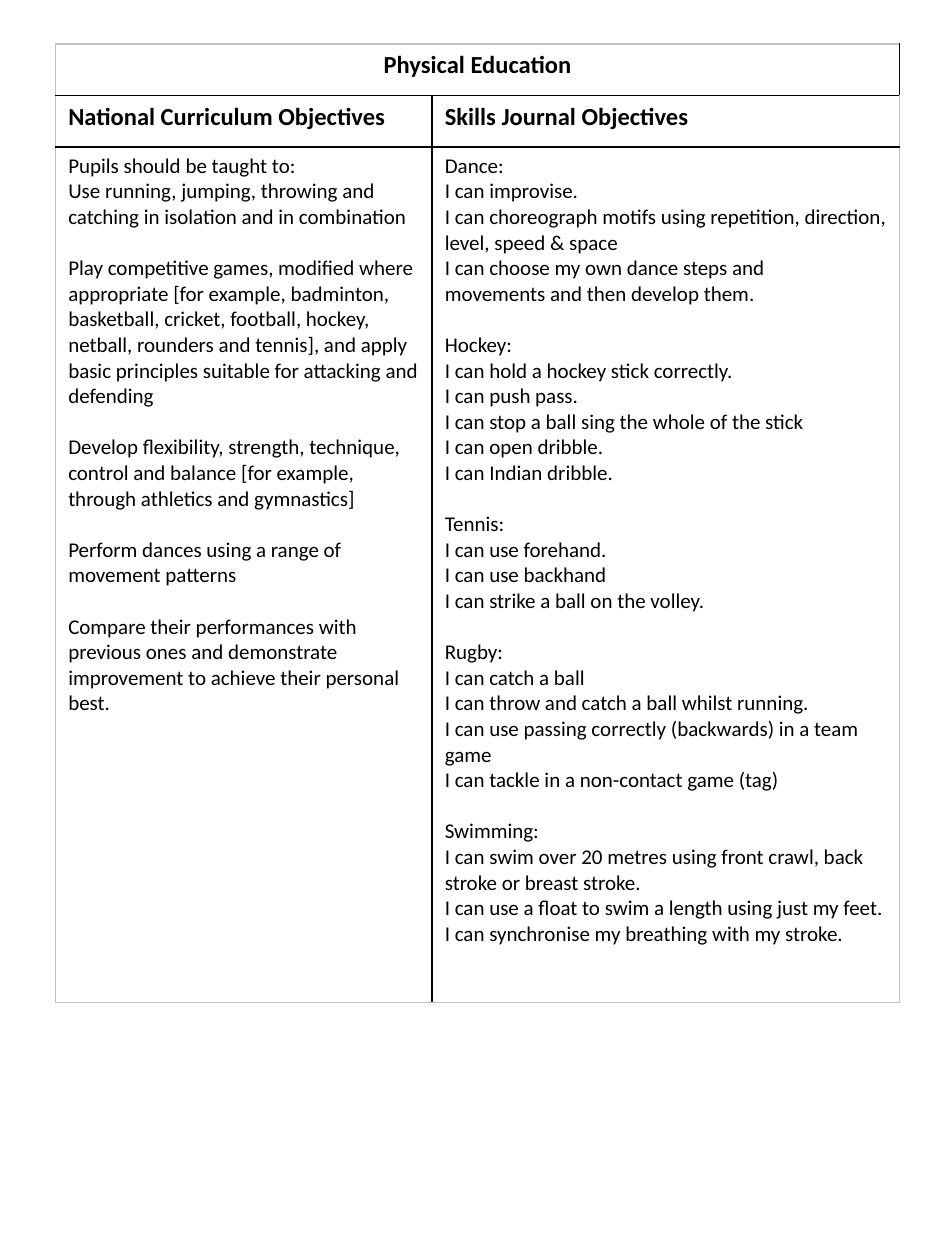
from lxml.etree import SubElement
from pptx import Presentation
from pptx.dml.color import RGBColor
from pptx.enum.text import PP_ALIGN as Align
from pptx.oxml.ns import qn
from pptx.util import Pt

FONT, BLACK, GREY = "Calibri", "000000", "BFBFBF"
HEADING = {"size": Pt(14), "bold": True, "name": FONT}
BODY = {"size": Pt(12), "bold": False, "name": FONT}
GROUP_GAP = 14.65
COL_WIDTHS = [215.2, 267]
ROW_HEIGHTS = [29.4, 29.4, 489]

TITLE = "Physical Education"
HEADERS = ["National Curriculum Objectives", "Skills Journal Objectives"]
CURRICULUM = [
    ["Pupils should be taught to:",
     "Use running, jumping, throwing and catching in isolation and in combination"],
    ["Play competitive games, modified where appropriate [for example, badminton, "
     "basketball, cricket, football, hockey, netball, rounders and tennis], and apply "
     "basic principles suitable for attacking and defending"],
    ["Develop flexibility, strength, technique, control and balance [for example, "
     "through athletics and gymnastics]"],
    ["Perform dances using a range of movement patterns"],
    ["Compare their performances with previous ones and demonstrate improvement to "
     "achieve their personal best."],
]
SKILLS = [
    ["Dance:", "I can improvise.",
     "I can choreograph motifs using repetition, direction, level, speed & space",
     "I can choose my own dance steps and", "movements and then develop them."],
    ["Hockey:", "I can hold a hockey stick correctly.", "I can push pass.",
     "I can stop a ball sing the whole of the stick", "I can open dribble.",
     "I can Indian dribble."],
    ["Tennis:", "I can use forehand.", "I can use backhand",
     "I can strike a ball on the volley."],
    ["Rugby:", "I can catch a ball", "I can throw and catch a ball whilst running.",
     "I can use passing correctly (backwards) in a team game",
     "I can tackle in a non-contact game (tag)"],
    ["Swimming:", "I can swim over 20 metres using front crawl, back",
     "stroke or breast stroke.",
     "I can use a float to swim a length using just my feet.",
     "I can synchronise my breathing with my stroke."],
]


def rgb(value):
    """Turn a hex string into a colour."""
    return RGBColor.from_string(value)


def set_borders(cell, colours):
    """Draw the left, right, top and bottom borders of a cell."""
    tc_pr = cell._tc.get_or_add_tcPr()
    for i, (side, colour) in enumerate(zip("LRTB", colours)):
        ln = SubElement(tc_pr, qn(f"a:ln{side}"), w=str(Pt(1)))
        fill = SubElement(ln, qn("a:solidFill"))
        SubElement(fill, qn("a:srgbClr"), val=colour)
        tc_pr.insert(i, ln)


def fill_cell(cell, groups, font, align=Align.LEFT):
    """Write groups of paragraphs with a gap before each later group."""
    tf = cell.text_frame
    lines = [(g and not i, text) for g, group in enumerate(groups)
             for i, text in enumerate(group)]
    for n, (gap, text) in enumerate(lines):
        p = tf.add_paragraph() if n else tf.paragraphs[0]
        p.alignment = align
        if gap:
            p.space_before = Pt(GROUP_GAP)
        r = p.add_run()
        r.text = text
        r.font.color.rgb = rgb(BLACK)
        for key, value in font.items():
            setattr(r.font, key, value)


def add_objectives_table(slide, left, top, width, height):
    """Place the table of objectives in the given box."""
    rows, cols = len(ROW_HEIGHTS), len(COL_WIDTHS)
    table = slide.shapes.add_table(rows, cols, Pt(left), Pt(top), Pt(width), Pt(height)).table
    table.first_row = table.horz_banding = False
    for col, w in zip(table.columns, COL_WIDTHS):
        col.width = Pt(w)
    for row, h in zip(table.rows, ROW_HEIGHTS):
        row.height = Pt(h)
    for r in range(rows):
        for c in range(cols):
            cell = table.cell(r, c)
            cell.fill.background()
            edges = [c == 0, c == cols - 1, r == 0, r == rows - 1]
            set_borders(cell, [GREY if outer else BLACK for outer in edges])
    table.cell(0, 0).merge(table.cell(0, cols - 1))
    fill_cell(table.cell(0, 0), [[TITLE]], HEADING, Align.CENTER)
    for c, (header, groups) in enumerate(zip(HEADERS, [CURRICULUM, SKILLS])):
        fill_cell(table.cell(1, c), [[header]], HEADING)
        fill_cell(table.cell(2, c), groups, BODY)


def main():
    """Build and save the slide."""
    prs = Presentation()
    prs.slide_width, prs.slide_height = Pt(540), Pt(720)
    slide = prs.slides.add_slide(prs.slide_layouts[6])
    add_objectives_table(slide, 31.8, 25.2, sum(COL_WIDTHS), sum(ROW_HEIGHTS))
    prs.save("out.pptx")


if __name__ == "__main__":
    main()
